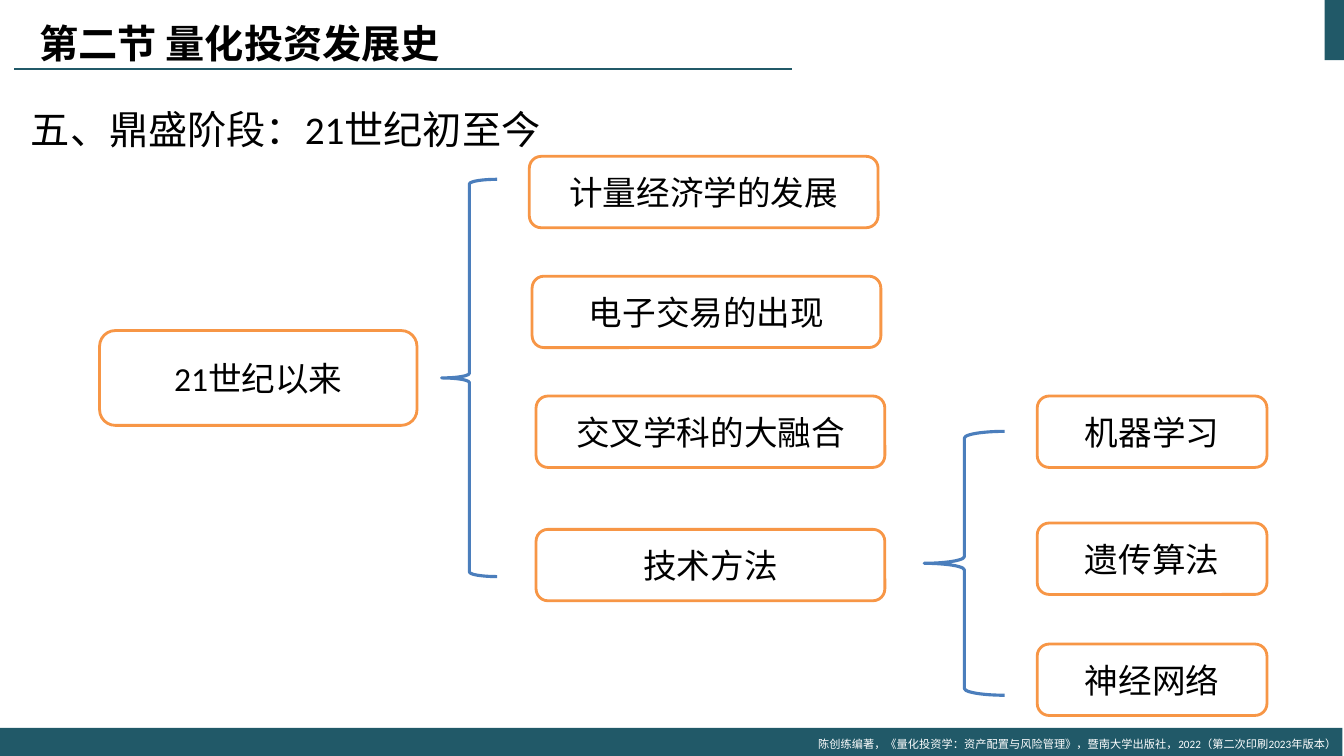
from dataclasses import dataclass

from lxml.etree import SubElement
from pptx import Presentation
from pptx.dml.color import RGBColor
from pptx.enum.lang import MSO_LANGUAGE_ID
from pptx.enum.shapes import MSO_CONNECTOR, MSO_SHAPE
from pptx.enum.text import MSO_ANCHOR, PP_ALIGN
from pptx.oxml.ns import qn
from pptx.util import Cm, Pt


@dataclass(frozen=True)
class Theme:
    teal: RGBColor = RGBColor(0x21, 0x59, 0x68)
    orange: RGBColor = RGBColor(0xF7, 0x96, 0x46)
    blue: RGBColor = RGBColor(0x4B, 0x7E, 0xBC)
    black: RGBColor = RGBColor(0, 0, 0)
    white: RGBColor = RGBColor(255, 255, 255)
    latin: str = "Calibri"
    chinese: str = "Noto Sans CJK SC"
    heading: int = 28
    label: int = 24
    credit: int = 8


theme = Theme()


def write(s, text, size, color=theme.black, font=theme.latin, bold=False,
          align=PP_ALIGN.LEFT, anchor=MSO_ANCHOR.MIDDLE, spacing=None):
    tf = s.text_frame
    tf.word_wrap = True
    tf.vertical_anchor = anchor
    p = tf.paragraphs[0]
    p.alignment = align
    p.line_spacing = spacing
    r = p.add_run()
    r.text = text
    r.font.size = Pt(size)
    r.font.bold = bold
    r.font.color.rgb = color
    r.font.name = font
    r.font.language_id = MSO_LANGUAGE_ID.SIMPLIFIED_CHINESE
    SubElement(r.font._element, qn("a:ea"), typeface=theme.chinese)


def add_shape(kind, box, fill=None, line=None, width=0):
    """Add a shadowless shape; box is left, top, width, height in cm."""
    s = slide.shapes.add_shape(kind, *map(Cm, box))
    s.shadow.inherit = False
    if fill is None:
        s.fill.background()
    else:
        s.fill.solid()
        s.fill.fore_color.rgb = fill
    if line is None:
        s.line.fill.background()
    else:
        s.line.color.rgb = line
        s.line.width = Pt(width)
    return s


prs = Presentation()
prs.slide_width, prs.slide_height = Cm(33.87), Cm(19.05)
slide = prs.slides.add_slide(prs.slide_layouts[5])

# Frame: corner block, title rule, footer band
add_shape(MSO_SHAPE.RECTANGLE, (33.38, 0, 0.5, 1.52), theme.teal)
rule = slide.shapes.add_connector(
    MSO_CONNECTOR.STRAIGHT, Cm(0.36), Cm(1.73), Cm(19.96), Cm(1.73))
rule.line.color.rgb = theme.teal
rule.line.width = Pt(1.5)
SubElement(rule._element.spPr, qn("a:effectLst"))
add_shape(MSO_SHAPE.RECTANGLE, (0, 18.34, 33.83, 0.71), theme.teal)
credit = slide.shapes.add_textbox(Cm(20.24), Cm(18.44), Cm(13.69), Cm(0.61))
write(credit, "陈创练编著，《量化投资学：资产配置与风险管理》，暨南大学出版社，2022（第二次印刷2023年版本）",
      theme.credit, color=theme.white, align=PP_ALIGN.RIGHT)

# Title and heading
title = slide.shapes.title
title.left, title.top, title.width, title.height = map(Cm, (0.74, 0, 27.64, 2.16))
write(title, "第二节 量化投资发展史", theme.heading, font=theme.chinese, bold=True)
heading = slide.shapes.add_textbox(Cm(0.53), Cm(1.93), Cm(32.79), Cm(13.67))
write(heading, "五、鼎盛阶段：21世纪初至今", theme.heading,
      anchor=MSO_ANCHOR.TOP, spacing=1.5)

# Tree: root, four drivers, three techniques
for brace in ((11.13, 4.52, 1.4, 10.01), (23.29, 10.87, 2.03, 6.65)):
    add_shape(MSO_SHAPE.LEFT_BRACE, brace, line=theme.blue, width=2.25)

root_size, driver_size, technique_size = (8, 2.39), (8.79, 1.8), (5.79, 1.8)
nodes = [
    ("21世纪以来", 2.51, 8.33, root_size),
    ("计量经济学的发展", 13.34, 3.94, driver_size),
    ("电子交易的出现", 13.41, 6.96, driver_size),
    ("交叉学科的大融合", 13.51, 9.98, driver_size),
    ("技术方法", 13.51, 13.34, driver_size),
    ("机器学习", 26.14, 9.98, technique_size),
    ("遗传算法", 26.14, 13.18, technique_size),
    ("神经网络", 26.14, 16.23, technique_size),
]
for text, left, top, size in nodes:
    node = add_shape(MSO_SHAPE.ROUNDED_RECTANGLE, (left, top, *size),
                     theme.white, theme.orange, 2)
    write(node, text, theme.label, align=PP_ALIGN.CENTER)

prs.save("out.pptx")
